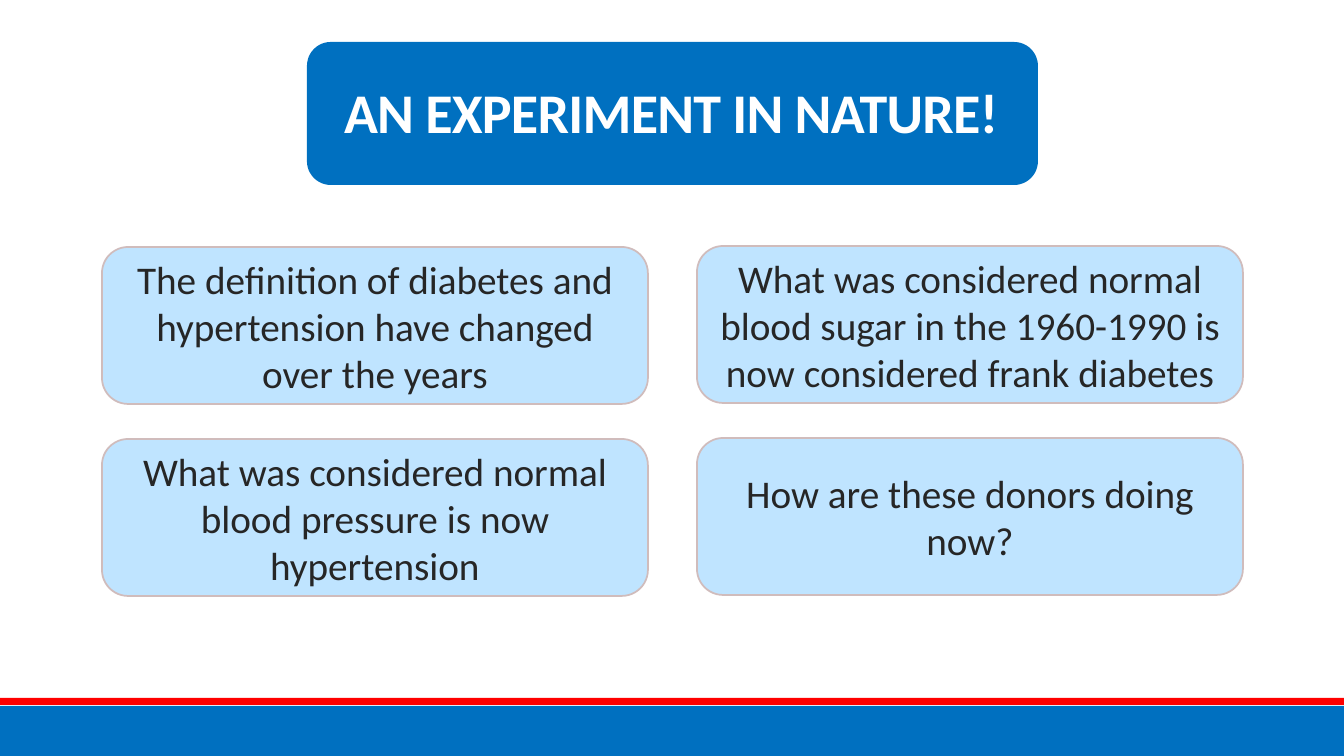
"""Build the "An experiment in nature!" slide."""
from pptx import Presentation
from pptx import util as u
from pptx.dml.color import RGBColor
from pptx.enum import shapes, text

PX = 12192000 / 1344
COLORS = {"blue": "0070C0", "red": "FF0000", "card": "BFE4FF",
          "edge": "D0BCBC", "ink": "262626", "white": "FFFFFF"}
RECT = shapes.MSO_SHAPE.RECTANGLE
ROUNDED = shapes.MSO_SHAPE.ROUNDED_RECTANGLE
CARDS = [
    ["The definition of diabetes and hypertension have changed over the years",
     "What was considered normal blood sugar in the 1960-1990 is now considered frank diabetes"],
    ["What was considered normal blood pressure is now hypertension",
     "How are these donors doing now?"],
]


def add_panel(kind, fill, *box):
    sp = s.shapes.add_shape(kind, *(round(n * PX) for n in box))
    sp.shadow.inherit = False
    sp.fill.solid()
    sp.fill.fore_color.rgb = RGBColor.from_string(COLORS[fill])
    sp.line.fill.background()
    return sp


def style_text(p, size, color, align):
    p.alignment = align
    p.font.name = "Calibri"
    p.font.size = u.Pt(size)
    p.font.color.rgb = RGBColor.from_string(COLORS[color])


prs = Presentation()
prs.slide_width, prs.slide_height = round(1344 * PX), round(756 * PX)
s = prs.slides.add_slide(prs.slide_layouts[5])

add_panel(RECT, "blue", 0, 706, 1344, 50)
add_panel(RECT, "red", 0, 698, 1344, 7)

for row, labels in enumerate(CARDS):
    for col, label in enumerate(labels):
        sp = add_panel(ROUNDED, "card", 102 + 595 * col, 247 - col + 192 * row, 546, 157)
        sp.line.color.rgb = RGBColor.from_string(COLORS["edge"])
        sp.line.width = u.Pt(1.25)
        tf = sp.text_frame
        tf.word_wrap = True
        tf.vertical_anchor = text.MSO_ANCHOR.MIDDLE
        tf.text = label
        style_text(tf.paragraphs[0], 28, "ink", text.PP_ALIGN.CENTER)

add_panel(ROUNDED, "blue", 307, 42, 731, 143)

title = s.shapes.title
s.shapes._spTree.append(title._element)
title.left, title.top, title.width, title.height = (round(n * PX) for n in (334, 70, 677, 80))
tf = title.text_frame
tf.text = "AN EXPERIMENT IN NATURE!"
tf.word_wrap = True
tf.auto_size = text.MSO_AUTO_SIZE.NONE
tf.vertical_anchor = text.MSO_ANCHOR.BOTTOM
p = tf.paragraphs[0]
style_text(p, 40, "white", text.PP_ALIGN.LEFT)
p.font.bold = True
p.line_spacing = 0.85
p.runs[0]._r.get_or_add_rPr().set("spc", "-50")

prs.save("out.pptx")
